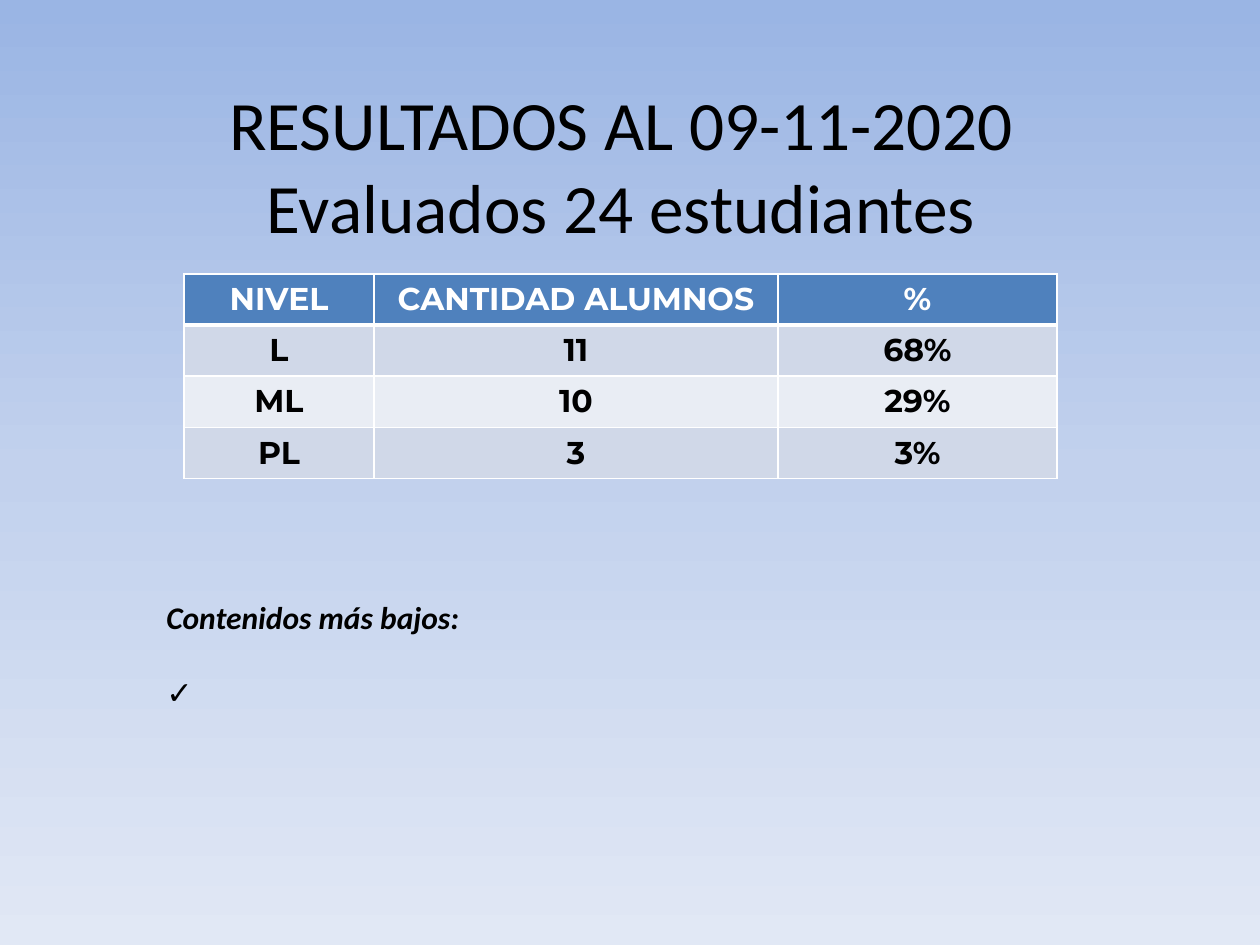
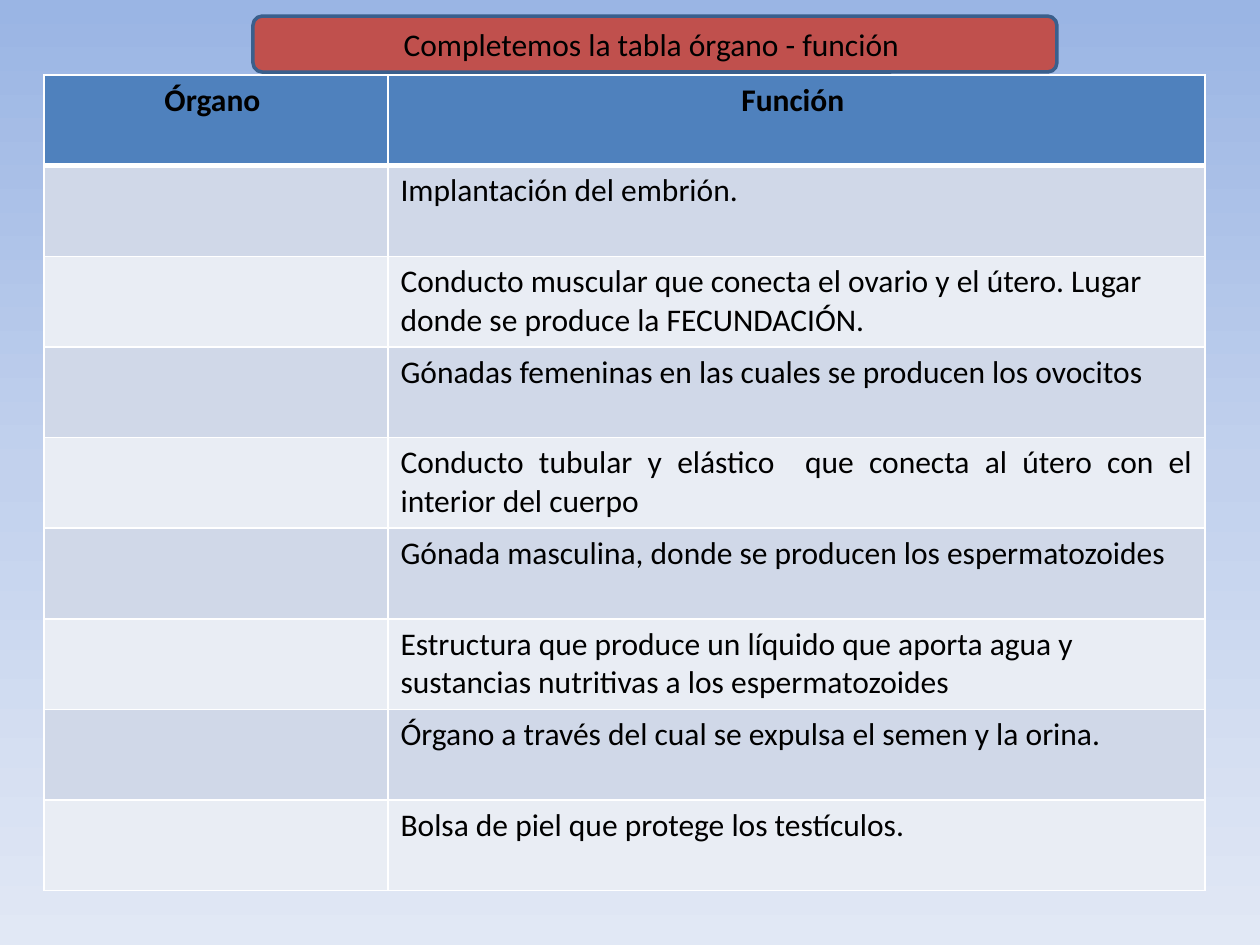
from copy import deepcopy

from lxml.etree import SubElement
from pptx import Presentation
from pptx.dml.color import RGBColor
from pptx.enum.shapes import MSO_SHAPE
from pptx.enum.text import MSO_ANCHOR, MSO_AUTO_SIZE, PP_ALIGN
from pptx.oxml.ns import qn
from pptx.util import Emu, Pt

PX_PER_INCH = 126
TITLE_ONLY, BLANK = 5, 6
BODY_FONT, RESULTS_FONT = "Calibri", "Montserrat"
COLORS = {
    "sky_top": "9AB5E4",
    "sky_middle": "C2D1ED",
    "sky_bottom": "E1E8F5",
    "header": "4F81BD",
    "odd_row": "D0D8E8",
    "even_row": "E9EDF4",
    "banner": "C0504D",
    "banner_line": "3A5F8C",
    "white": "FFFFFF",
    "black": "000000",
}
LEFT, CENTER, JUSTIFY = PP_ALIGN.LEFT, PP_ALIGN.CENTER, PP_ALIGN.JUSTIFY

RESULTS = [
    ("NIVEL", "CANTIDAD ALUMNOS", "%"),
    ("L", "11", "68%"),
    ("ML", "10", "29%"),
    ("PL", "3", "3%"),
]
ORGAN_FUNCTIONS = [
    ("Implantación del embrión.", LEFT),
    ("Conducto muscular que conecta el ovario y el útero. Lugar donde se "
     "produce la FECUNDACIÓN.", LEFT),
    ("Gónadas femeninas en las cuales se producen los ovocitos", JUSTIFY),
    ("Conducto tubular y elástico  que conecta al útero con el interior "
     "del cuerpo", JUSTIFY),
    ("Gónada masculina, donde se producen los espermatozoides", LEFT),
    ("Estructura que produce un líquido que aporta agua y sustancias "
     "nutritivas a los espermatozoides", LEFT),
    ("Órgano a través del cual se expulsa el semen y la orina.", LEFT),
    ("Bolsa de piel que protege los testículos.", LEFT),
]


def px(length):
    return Emu(round(length * 914400 / PX_PER_INCH))


def place(*lengths):
    return [px(length) for length in lengths]


def rgb(name):
    return RGBColor.from_string(COLORS[name])


def add_span(para, text, size=18, font=BODY_FONT, color="black",
             bold=False, italic=False):
    span = para.add_run()
    span.text = text
    span.font.size = Pt(size)
    span.font.name = font
    span.font.color.rgb = rgb(color)
    span.font.bold = bold
    span.font.italic = italic


def paint_background(master):
    """Give every slide the vertical three-stop gradient."""
    fill = master.background.fill
    fill.gradient()
    fill.gradient_angle = 270
    stop_list = master.element.find(".//" + qn("a:gsLst"))
    stop_list.insert(1, deepcopy(stop_list[0]))
    names = ("sky_top", "sky_middle", "sky_bottom")
    for stop, name, position in zip(fill.gradient_stops, names, (0, 0.5, 1)):
        stop.color.rgb = rgb(name)
        stop.position = position


def set_borders(cell, top, bottom):
    """Draw white cell borders; top and bottom widths are in points."""
    properties = cell._tc.get_or_add_tcPr()
    widths = {"a:lnL": 1, "a:lnR": 1, "a:lnT": top, "a:lnB": bottom}
    for index, (tag, width) in enumerate(widths.items()):
        line = SubElement(properties, qn(tag), w=str(Pt(width)))
        color = SubElement(SubElement(line, qn("a:solidFill")), qn("a:srgbClr"))
        color.set("val", COLORS["white"])
        properties.insert(index, line)


def add_banded_table(page, bounds, column_widths, row_count):
    table = page.shapes.add_table(
        row_count, len(column_widths), *place(*bounds)).table
    for column, width in zip(table.columns, column_widths):
        column.width = px(width)
    for number, row in enumerate(table.rows):
        band = "odd_row" if number % 2 else "even_row"
        for cell in row.cells:
            cell.fill.solid()
            cell.fill.fore_color.rgb = rgb(band if number else "header")
            set_borders(cell, top=3 if number == 1 else 1,
                        bottom=1 if number else 3)
    return table


def write_cell(cell, text, align=CENTER, **style):
    para = cell.text_frame.paragraphs[0]
    para.alignment = align
    add_span(para, text, **style)


def add_title(page, lines):
    title = page.shapes.title
    title.left, title.top, title.width, title.height = place(54, 86, 1134, 157)
    frame = title.text_frame
    frame.auto_size = MSO_AUTO_SIZE.NONE
    frame.vertical_anchor = MSO_ANCHOR.MIDDLE
    para = frame.paragraphs[0]
    para.alignment = CENTER
    for number, line in enumerate(lines):
        if number:
            para.add_line_break()
        add_span(para, line, size=39.6)


def add_check_bullet(para):
    properties = para._p.get_or_add_pPr()
    indent = px(48)
    properties.set("marL", str(indent))
    properties.set("indent", str(-indent))
    SubElement(properties, qn("a:buFont"), typeface=BODY_FONT)
    SubElement(properties, qn("a:buChar"), char="✓")


def add_lowest_contents(page):
    box = page.shapes.add_textbox(*place(154, 592, 983, 127))
    frame = box.text_frame
    frame.word_wrap = True
    add_span(frame.paragraphs[0], "Contenidos más bajos:",
             bold=True, italic=True)
    item = frame.add_paragraph()
    item.space_before = Pt(22)
    add_check_bullet(item)
    add_span(item, " ")


def add_banner(page, text):
    banner = page.shapes.add_shape(
        MSO_SHAPE.ROUNDED_RECTANGLE, *place(253, 16, 804, 56))
    banner.shadow.inherit = False
    banner.fill.solid()
    banner.fill.fore_color.rgb = rgb("banner")
    banner.line.color.rgb = rgb("banner_line")
    banner.line.width = Pt(2)
    frame = banner.text_frame
    frame.word_wrap = True
    frame.vertical_anchor = MSO_ANCHOR.MIDDLE
    para = frame.paragraphs[0]
    para.alignment = CENTER
    add_span(para, text)


def build_results(deck):
    page = deck.slides.add_slide(deck.slide_layouts[TITLE_ONLY])
    add_title(page, ["RESULTADOS AL 09-11-2020", "Evaluados 24 estudiantes"])
    table = add_banded_table(
        page, (184, 274, 873, 204), (190, 404, 279), len(RESULTS))
    for number, (row, texts) in enumerate(zip(table.rows, RESULTS)):
        for cell, text in zip(row.cells, texts):
            write_cell(cell, text, font=RESULTS_FONT, bold=True,
                       color="black" if number else "white")
    add_lowest_contents(page)


def build_organ_functions(deck):
    page = deck.slides.add_slide(deck.slide_layouts[BLANK])
    table = add_banded_table(
        page, (44, 75, 1161, 816), (344, 817), len(ORGAN_FUNCTIONS) + 1)
    for column, heading in enumerate(("Órgano ", "Función ")):
        write_cell(table.cell(0, column), heading, bold=True)
    for number, (text, align) in enumerate(ORGAN_FUNCTIONS, start=1):
        write_cell(table.cell(number, 1), text, align)
    add_banner(page, "Completemos la tabla órgano - función ")


def main():
    deck = Presentation()
    deck.slide_width, deck.slide_height = place(1260, 945)
    paint_background(deck.slide_master)
    build_results(deck)
    build_organ_functions(deck)
    deck.save("out.pptx")


if __name__ == "__main__":
    main()
